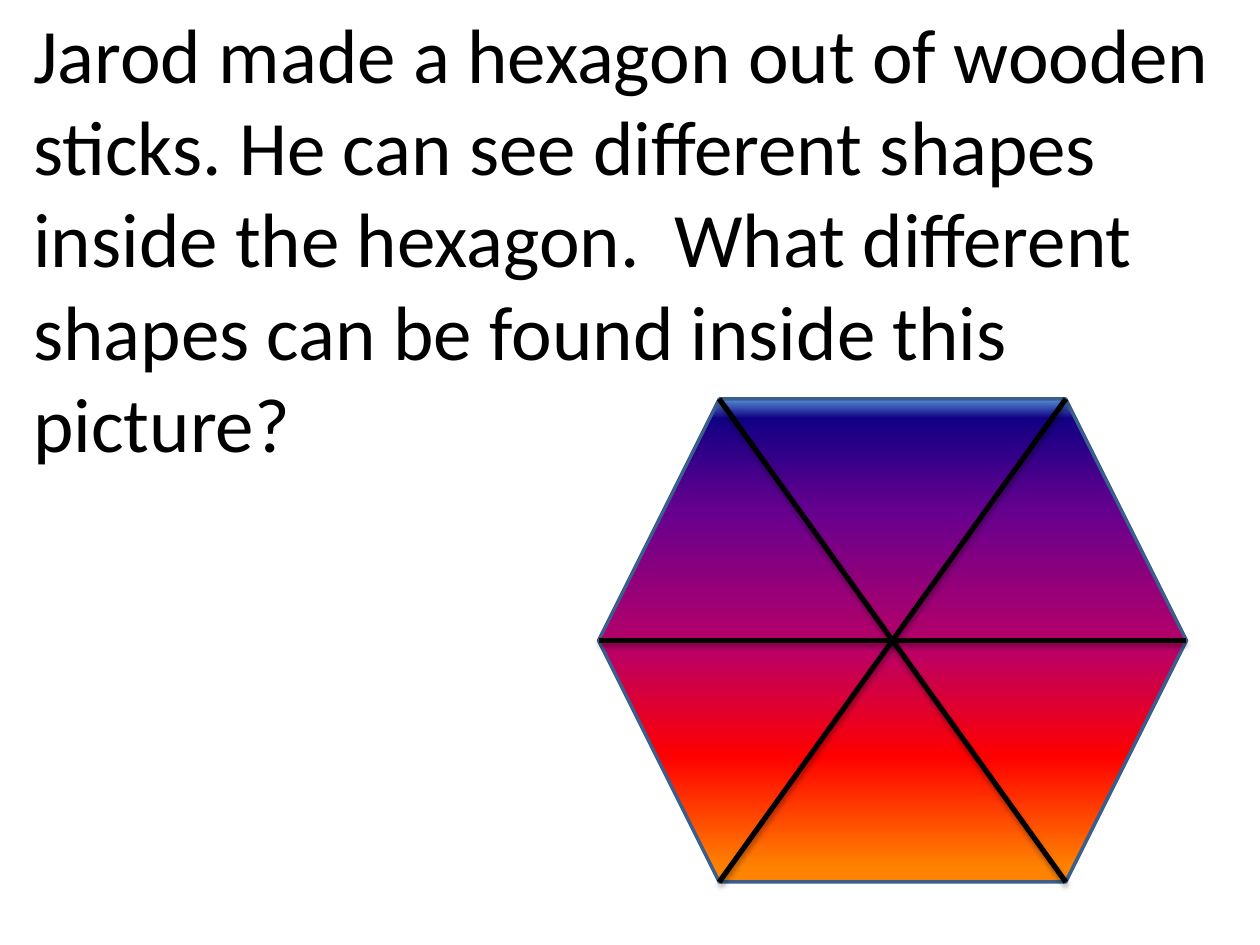
from dataclasses import dataclass

from lxml import etree
from pptx import Presentation
from pptx.dml.color import RGBColor
from pptx.enum import shapes, text
from pptx.oxml import ns
from pptx.util import Pt


@dataclass(frozen=True)
class Theme:
    """Colours, type and line weights of the slide."""
    font: str = "Calibri"
    question_size: int = 44
    ink: str = "000000"
    outline: str = "3A5F8C"
    outline_width: int = 2
    stick_width: int = 3
    sunset: tuple = ((0, "558ED5"), (4, "110084"), (23, "66008F"),
                     (52, "BA0066"), (74, "FF0000"), (97, "FF8200"))


THEME = Theme()
QUESTION = ("Jarod made a hexagon out of wooden "
            "sticks. He can see different "
            "shapes inside the hexagon.  What different shapes can be found "
            "inside this picture?")


def add_element(parent, tag, **attributes):
    """Append a DrawingML element to its parent."""
    values = {name: str(value) for name, value in attributes.items()}
    return etree.SubElement(parent, ns.qn(tag), values)


def fill_sunset(shape):
    """Fill a shape with the sunset gradient, top to bottom."""
    shape.fill.gradient()
    shape.fill.gradient_angle = 270
    stops = shape.fill._xPr.find(ns.qn("a:gradFill")).find(ns.qn("a:gsLst"))
    for stop in list(stops):
        stops.remove(stop)
    for position, colour in THEME.sunset:
        stop = add_element(stops, "a:gs", pos=position * 1000)
        add_element(stop, "a:srgbClr", val=colour)


def add_stick(slide, start, end):
    """Draw one stick with a soft shadow below it."""
    stick = slide.shapes.add_connector(
        shapes.MSO_CONNECTOR.STRAIGHT, *map(Pt, (*start, *end)))
    stick.line.width = Pt(THEME.stick_width)
    stick.line.color.rgb = RGBColor.from_string(THEME.ink)
    effects = add_element(stick._element.spPr, "a:effectLst")
    shadow = add_element(effects, "a:outerShdw", blurRad=Pt(3.1),
                         dist=Pt(1.8), dir=90 * 60000, rotWithShape=0)
    colour = add_element(shadow, "a:srgbClr", val=THEME.ink)
    add_element(colour, "a:alpha", val=35000)


def add_hexagon(slide, left, top, width, height):
    """Draw the hexagon and the three sticks joining opposite corners."""
    hexagon = slide.shapes.add_shape(
        shapes.MSO_SHAPE.HEXAGON, *map(Pt, (left, top, width, height)))
    hexagon.shadow.inherit = False
    fill_sunset(hexagon)
    hexagon.line.color.rgb = RGBColor.from_string(THEME.outline)
    hexagon.line.width = Pt(THEME.outline_width)
    inset = hexagon.adjustments[0] * min(width, height)
    right, bottom, middle = left + width, top + height, top + height / 2
    add_stick(slide, (left + inset, top), (right - inset, bottom))
    add_stick(slide, (right - inset, top), (left + inset, bottom))
    add_stick(slide, (left, middle), (right, middle))


def add_question(slide, left, top, width, height):
    """Write the question in a wrapping text box."""
    box = slide.shapes.add_textbox(*map(Pt, (left, top, width, height)))
    frame = box.text_frame
    frame.word_wrap = True
    frame.auto_size = text.MSO_AUTO_SIZE.SHAPE_TO_FIT_TEXT
    run = frame.paragraphs[0].add_run()
    run.text = QUESTION
    run.font.name = THEME.font
    run.font.size = Pt(THEME.question_size)
    run.font.color.rgb = RGBColor.from_string(THEME.ink)


def main():
    """Build and save the presentation."""
    presentation = Presentation()
    presentation.slide_width, presentation.slide_height = Pt(720), Pt(540)
    slide = presentation.slides.add_slide(presentation.slide_layouts[6])
    add_hexagon(slide, 342, 228, 336, 276)
    add_question(slide, 12, 0, 726, 273.6)
    presentation.save("out.pptx")


if __name__ == "__main__":
    main()
